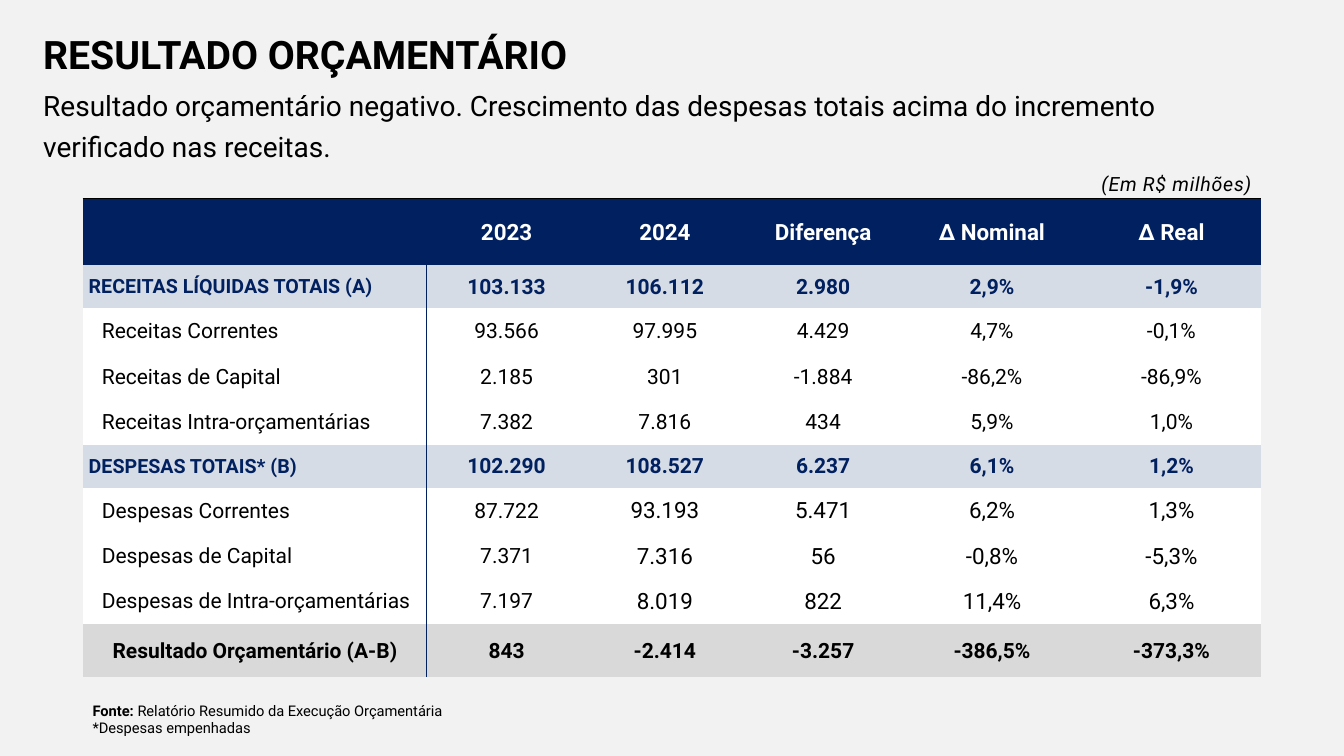
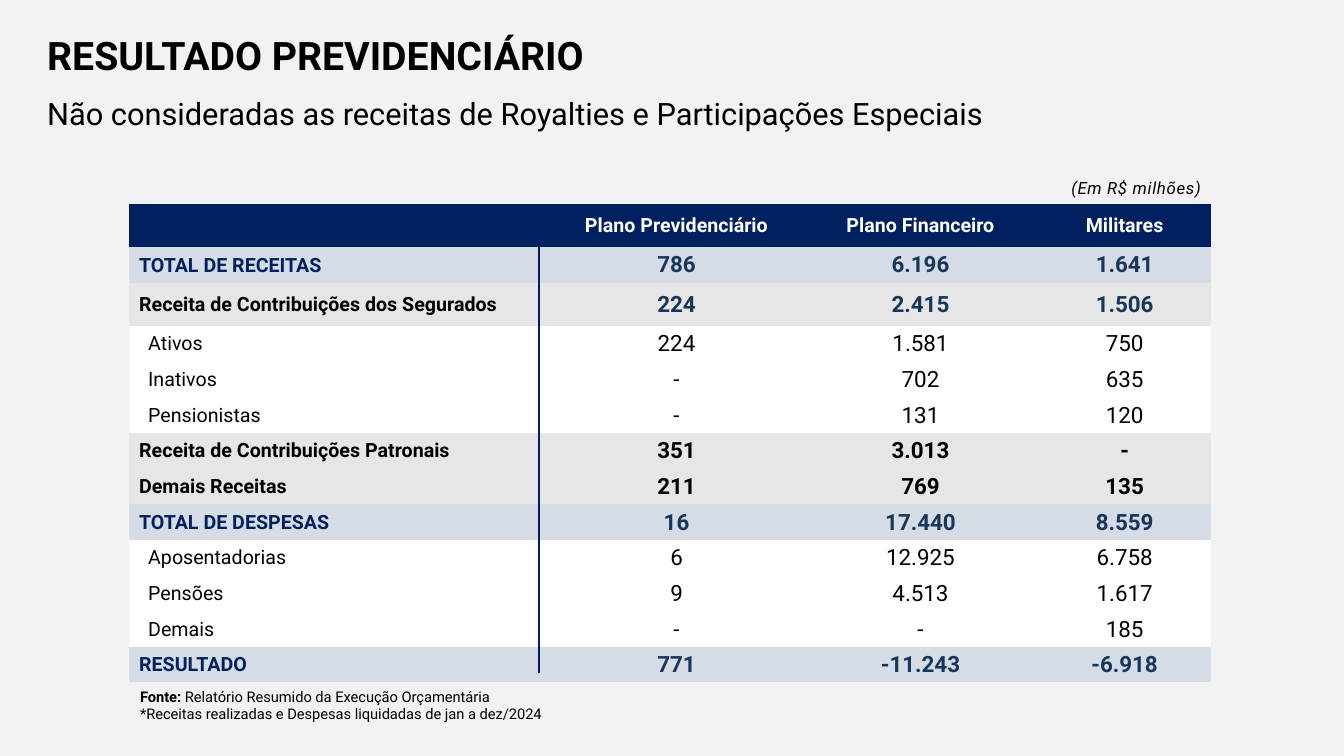
from dataclasses import dataclass, replace

from lxml.etree import SubElement
from pptx import Presentation
from pptx.dml.color import RGBColor
from pptx.enum.shapes import MSO_CONNECTOR
from pptx.enum.text import MSO_ANCHOR, MSO_AUTO_SIZE, PP_ALIGN
from pptx.oxml import parse_xml
from pptx.oxml.ns import nsdecls, qn
from pptx.util import Inches, Pt

# Shared look
FONT = "Roboto"
BLACK, WHITE, NAVY, STEEL = "000000", "FFFFFF", "002060", "16365C"
PAGE_GREY, PALE_BLUE = "F2F2F2", "D6DCE5"
RESULT_GREY, GROUP_GREY = "D9D9D9", "E7E6E6"
NO_GRID_STYLE = "{2D5ABB26-0587-4C30-8999-92F81FD0307C}"
CELL_MARGIN = 0.01

TITLE = {"size": Pt(28), "bold": True}
SOURCE = {"size": Pt(10.5), "bold": False}


@dataclass(frozen=True)
class Band:
    """Look of one kind of table row."""
    fill: str
    label_color: str
    value_color: str
    bold: bool
    label_size: float
    value_size: float
    label_left: float = 0.1
    label_align: PP_ALIGN = PP_ALIGN.LEFT
    first_value_size: float | None = None


@dataclass(frozen=True)
class Row:
    band: Band
    height: float
    label: str
    values: tuple[str, ...]


@dataclass(frozen=True)
class Place:
    left: float
    top: float
    width: float
    height: float

    def lengths(self) -> tuple:
        return tuple(Inches(n) for n in (self.left, self.top, self.width, self.height))


@dataclass(frozen=True)
class Divider:
    x: float
    top: float
    bottom: float
    weight: float


@dataclass(frozen=True)
class Report:
    """Everything shown on one slide."""
    title: str
    title_place: Place
    subtitle: str
    subtitle_place: Place
    subtitle_size: float
    unit_place: Place
    unit_size: float
    footnote: str
    footnote_place: Place
    table_place: Place
    columns: tuple[float, ...]
    rows: tuple[Row, ...]
    divider: Divider
    top_rule: bool = False


def rgb(color: str) -> RGBColor:
    return RGBColor.from_string(color)


def add_span(para, text: str, look: dict, color: str = BLACK):
    span = para.add_run()
    span.text = text
    for name, value in {"name": FONT, **look}.items():
        setattr(span.font, name, value)
    span.font.color.rgb = rgb(color)
    return span


def add_box(page, place: Place, anchor=MSO_ANCHOR.TOP):
    box = page.shapes.add_textbox(*place.lengths())
    box.text_frame.word_wrap = True
    box.text_frame.vertical_anchor = anchor
    return box.text_frame


def add_heading(page, place: Place, text: str, look: dict, spacing: float) -> None:
    para = add_box(page, place, MSO_ANCHOR.MIDDLE).paragraphs[0]
    para.line_spacing = spacing
    add_span(para, text, look)


def add_unit(page, place: Place, size: float) -> None:
    para = add_box(page, place).paragraphs[0]
    para.alignment = PP_ALIGN.RIGHT
    para.line_spacing = 1.2
    span = add_span(para, "(Em R$ milhões)", {"size": Pt(size), "italic": True})
    span.font._element.set("spc", "50")


def add_source(page, place: Place, footnote: str) -> None:
    frame = add_box(page, place)
    frame.auto_size = MSO_AUTO_SIZE.SHAPE_TO_FIT_TEXT
    para = frame.paragraphs[0]
    add_span(para, "Fonte: ", {**SOURCE, "bold": True})
    add_span(para, "Relatório Resumido da Execução Orçamentária", SOURCE)
    add_span(frame.add_paragraph(), footnote, SOURCE)


def add_top_rule(cell) -> None:
    cell._tc.get_or_add_tcPr().insert(0, parse_xml(
        f'<a:lnT {nsdecls("a")} w="6350"><a:solidFill>'
        f'<a:srgbClr val="{BLACK}"/></a:solidFill></a:lnT>'))


def fill_cell(cell, text: str, band: Band, column: int) -> None:
    is_label = column == 0
    size = band.label_size if is_label else band.value_size
    if column == 1 and band.first_value_size:
        size = band.first_value_size
    margins = {
        "margin_left": band.label_left if is_label else CELL_MARGIN,
        "margin_right": CELL_MARGIN,
        "margin_top": CELL_MARGIN,
        "margin_bottom": 0,
    }
    for name, value in margins.items():
        setattr(cell, name, Inches(value))
    cell.vertical_anchor = MSO_ANCHOR.MIDDLE
    cell.fill.solid()
    cell.fill.fore_color.rgb = rgb(band.fill)
    para = cell.text_frame.paragraphs[0]
    para.alignment = band.label_align if is_label else PP_ALIGN.CENTER
    if text:
        color = band.label_color if is_label else band.value_color
        add_span(para, text, {"size": Pt(size), "bold": band.bold}, color)


def add_report_table(page, report: Report) -> None:
    frame = page.shapes.add_table(
        len(report.rows), len(report.columns), *report.table_place.lengths())
    table = frame.table
    table._tbl.tblPr.find(qn("a:tableStyleId")).text = NO_GRID_STYLE
    table.horz_banding = False
    for column, width in zip(table.columns, report.columns):
        column.width = Inches(width)
    for index, row in enumerate(report.rows):
        table.rows[index].height = Inches(row.height)
        for column, text in enumerate((row.label, *row.values)):
            fill_cell(table.cell(index, column), text, row.band, column)
    if report.top_rule:
        for cell in table.rows[0].cells:
            add_top_rule(cell)


def add_divider(page, divider: Divider) -> None:
    x = Inches(divider.x)
    line = page.shapes.add_connector(
        MSO_CONNECTOR.STRAIGHT, x, Inches(divider.top), x, Inches(divider.bottom))
    line.line.color.rgb = rgb(NAVY)
    line.line.width = Pt(divider.weight)
    SubElement(line._element.spPr, qn("a:effectLst"))


def add_report(deck, report: Report) -> None:
    page = deck.slides.add_slide(deck.slide_layouts[6])
    page.background.fill.solid()
    page.background.fill.fore_color.rgb = rgb(PAGE_GREY)
    add_heading(page, report.title_place, report.title, TITLE, 0.9)
    add_heading(page, report.subtitle_place, report.subtitle,
                {"size": Pt(report.subtitle_size)}, 1.2)
    add_unit(page, report.unit_place, report.unit_size)
    add_source(page, report.footnote_place, report.footnote)
    add_report_table(page, report)
    add_divider(page, report.divider)


# Budget result
HEADER = Band(NAVY, WHITE, WHITE, True, 16, 16)
SECTION = Band(PALE_BLUE, NAVY, NAVY, True, 14, 15, 0.06)
DETAIL = Band(WHITE, BLACK, BLACK, False, 15, 15, 0.19)
EXPENSE = replace(DETAIL, value_size=16, first_value_size=15)
BALANCE = Band(RESULT_GREY, BLACK, BLACK, True, 15, 15, CELL_MARGIN, PP_ALIGN.CENTER)

BUDGET = Report(
    title="RESULTADO ORÇAMENTÁRIO",
    title_place=Place(0.33, 0.17, 10.55, 0.79),
    subtitle="Resultado orçamentário negativo. Crescimento das despesas totais "
             "acima do incremento verificado nas receitas.",
    subtitle_place=Place(0.33, 0.82, 11.68, 0.79),
    subtitle_size=20,
    unit_place=Place(10.42, 1.61, 2.09, 0.42),
    unit_size=14,
    footnote="*Despesas empenhadas",
    footnote_place=Place(0.82, 6.91, 4.74, 0.45),
    table_place=Place(0.82, 1.97, 11.7, 4.75),
    columns=(3.42, 1.57, 1.57, 1.57, 1.78, 1.78),
    rows=(
        Row(HEADER, 0.66, "", ("2023", "2024", "Diferença", "∆ Nominal", "∆ Real")),
        Row(SECTION, 0.43, "RECEITAS LÍQUIDAS TOTAIS (A)",
            ("103.133", "106.112", "2.980", "2,9%", "-1,9%")),
        Row(DETAIL, 0.45, "Receitas Correntes",
            ("93.566", "97.995", "4.429", "4,7%", "-0,1%")),
        Row(DETAIL, 0.45, "Receitas de Capital",
            ("2.185", "301", "-1.884", "-86,2%", "-86,9%")),
        Row(DETAIL, 0.45, "Receitas Intra-orçamentárias",
            ("7.382", "7.816", "434", "5,9%", "1,0%")),
        Row(SECTION, 0.43, "DESPESAS TOTAIS* (B)",
            ("102.290", "108.527", "6.237", "6,1%", "1,2%")),
        Row(EXPENSE, 0.45, "Despesas Correntes",
            ("87.722", "93.193", "5.471", "6,2%", "1,3%")),
        Row(EXPENSE, 0.45, "Despesas de Capital",
            ("7.371", "7.316", "56", "-0,8%", "-5,3%")),
        Row(EXPENSE, 0.45, "Despesas de Intra-orçamentárias",
            ("7.197", "8.019", "822", "11,4%", "6,3%")),
        Row(BALANCE, 0.53, "Resultado Orçamentário (A-B)",
            ("843", "-2.414", "-3.257", "-386,5%", "-373,3%")),
    ),
    divider=Divider(4.23, 2.41, 6.72, 0.75),
    top_rule=True,
)

# Pension result
PLAN_HEADER = replace(HEADER, value_size=14)
TOTAL = Band(PALE_BLUE, NAVY, STEEL, True, 14, 16)
GROUP = Band(GROUP_GREY, BLACK, BLACK, True, 14, 16)
INSURED = replace(GROUP, value_color=STEEL)
ITEM = Band(WHITE, BLACK, BLACK, False, 14, 16, 0.19)
TALL = 0.43
SHORT = (4.75 - 2 * TALL) / 11

PENSION = Report(
    title="RESULTADO PREVIDENCIÁRIO",
    title_place=Place(0.37, 0.18, 7.85, 0.79),
    subtitle="Não consideradas as receitas de Royalties e Participações Especiais",
    subtitle_place=Place(0.37, 0.79, 12.6, 0.59),
    subtitle_size=22,
    unit_place=Place(9.92, 1.67, 2.09, 0.42),
    unit_size=12,
    footnote="*Receitas realizadas e Despesas liquidadas de jan a dez/2024",
    footnote_place=Place(1.29, 6.77, 8.02, 0.45),
    table_place=Place(1.28, 2.02, 10.73, 4.75),
    columns=(4.18, 2.5, 2.34, 1.71),
    rows=(
        Row(PLAN_HEADER, TALL, "",
            ("Plano Previdenciário", "Plano Financeiro", "Militares")),
        Row(TOTAL, SHORT, "TOTAL DE RECEITAS", ("786", "6.196", "1.641")),
        Row(INSURED, TALL, "Receita de Contribuições dos Segurados",
            ("224", "2.415", "1.506")),
        Row(ITEM, SHORT, "Ativos", ("224", "1.581", "750")),
        Row(ITEM, SHORT, "Inativos", ("-", "702", "635")),
        Row(ITEM, SHORT, "Pensionistas", ("-", "131", "120")),
        Row(GROUP, SHORT, "Receita de Contribuições Patronais", ("351", "3.013", "-")),
        Row(GROUP, SHORT, "Demais Receitas", ("211", "769", "135")),
        Row(TOTAL, SHORT, "TOTAL DE DESPESAS", ("16", "17.440", "8.559")),
        Row(ITEM, SHORT, "Aposentadorias", ("6", "12.925", "6.758")),
        Row(ITEM, SHORT, "Pensões", ("9", "4.513", "1.617")),
        Row(ITEM, SHORT, "Demais", ("-", "-", "185")),
        Row(TOTAL, SHORT, "RESULTADO", ("771", "-11.243", "-6.918")),
    ),
    divider=Divider(5.35, 2.28, 6.68, 1.5),
)


def main() -> None:
    deck = Presentation()
    deck.slide_width, deck.slide_height = Inches(13.33), Inches(7.5)
    for report in (BUDGET, PENSION):
        add_report(deck, report)
    deck.save("out.pptx")


if __name__ == "__main__":
    main()
